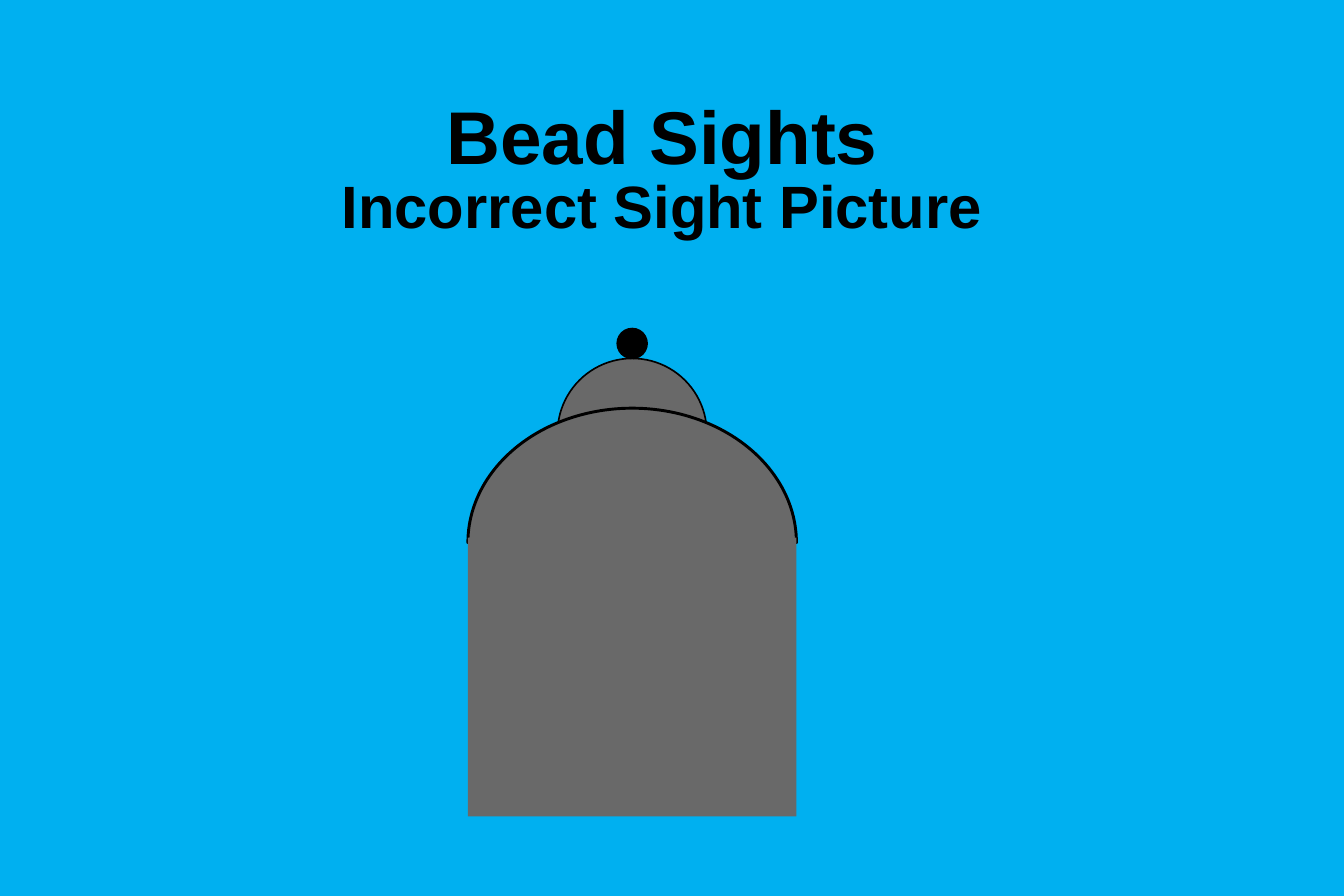
import dataclasses

import pptx
import pptx.dml.color
import pptx.enum.shapes
import pptx.enum.text
import pptx.util

Pt = pptx.util.Pt
MSO_SHAPE = pptx.enum.shapes.MSO_SHAPE

COLOURS: dict[str, str] = {"sky": "00B0F0", "steel": "696969", "ink": "000000"}
FONT = "Arial"
AXIS = 381  # vertical centre line of the sight
ARCH_THICKNESS = 0.31  # share of the arch's shorter side


@dataclasses.dataclass(frozen=True)
class SightPart:
    """A preset shape centred on the sight axis; lengths in points."""
    kind: pptx.enum.shapes.MSO_SHAPE
    top: float
    width: float
    height: float
    fill: str
    line_width: float = 0


# From back to front
SIGHT_PARTS = [
    SightPart(MSO_SHAPE.OVAL, 216, 90, 90, "steel", 1),
    SightPart(MSO_SHAPE.BLOCK_ARC, 246, 198, 162, "steel", 1.75),
    SightPart(MSO_SHAPE.OVAL, 282, 108, 102, "steel"),
    SightPart(MSO_SHAPE.RECTANGLE, 324, 198, 168, "steel"),
    SightPart(MSO_SHAPE.OVAL, 198, 18, 18, "ink", 1),
]


def rgb(name: str) -> pptx.dml.color.RGBColor:
    return pptx.dml.color.RGBColor.from_string(COLOURS[name])


def draw_part(slide, part: SightPart) -> None:
    shape = slide.shapes.add_shape(
        part.kind, Pt(AXIS - part.width / 2), Pt(part.top), Pt(part.width), Pt(part.height)
    )
    if part.kind == MSO_SHAPE.BLOCK_ARC:
        shape.adjustments[2] = ARCH_THICKNESS
    shape.shadow.inherit = False
    shape.fill.solid()
    shape.fill.fore_color.rgb = rgb(part.fill)
    if part.line_width:
        shape.line.color.rgb = rgb("ink")
        shape.line.width = Pt(part.line_width)
    else:
        shape.line.fill.background()


def write_title(slide) -> None:
    title = slide.shapes.title
    title.left, title.top, title.width, title.height = Pt(96), Pt(61), Pt(606), Pt(85.5)
    frame = title.text_frame
    frame.word_wrap = True
    frame.auto_size = pptx.enum.text.MSO_AUTO_SIZE.NONE
    frame.vertical_anchor = pptx.enum.text.MSO_ANCHOR.MIDDLE
    frame.margin_left = frame.margin_right = Pt(3.6)
    frame.margin_top = frame.margin_bottom = Pt(1.6)

    paragraph = frame.paragraphs[0]
    paragraph.alignment = pptx.enum.text.PP_ALIGN.CENTER
    paragraph.line_spacing = 0.85
    paragraph.font.name = FONT
    paragraph.font.bold = True
    paragraph.font.color.rgb = rgb("ink")
    heading = paragraph.add_run()
    heading.text = "Bead Sights"
    heading.font.size = Pt(45)
    paragraph.add_line_break()
    subheading = paragraph.add_run()
    subheading.text = "Incorrect Sight Picture"
    subheading.font.size = Pt(36)


def main() -> None:
    presentation = pptx.Presentation()
    presentation.slide_width, presentation.slide_height = Pt(810), Pt(540)
    slide = presentation.slides.add_slide(presentation.slide_layouts.get_by_name("Title Only"))
    slide.background.fill.solid()
    slide.background.fill.fore_color.rgb = rgb("sky")

    write_title(slide)
    for part in SIGHT_PARTS:
        draw_part(slide, part)

    presentation.save("out.pptx")


if __name__ == "__main__":
    main()
